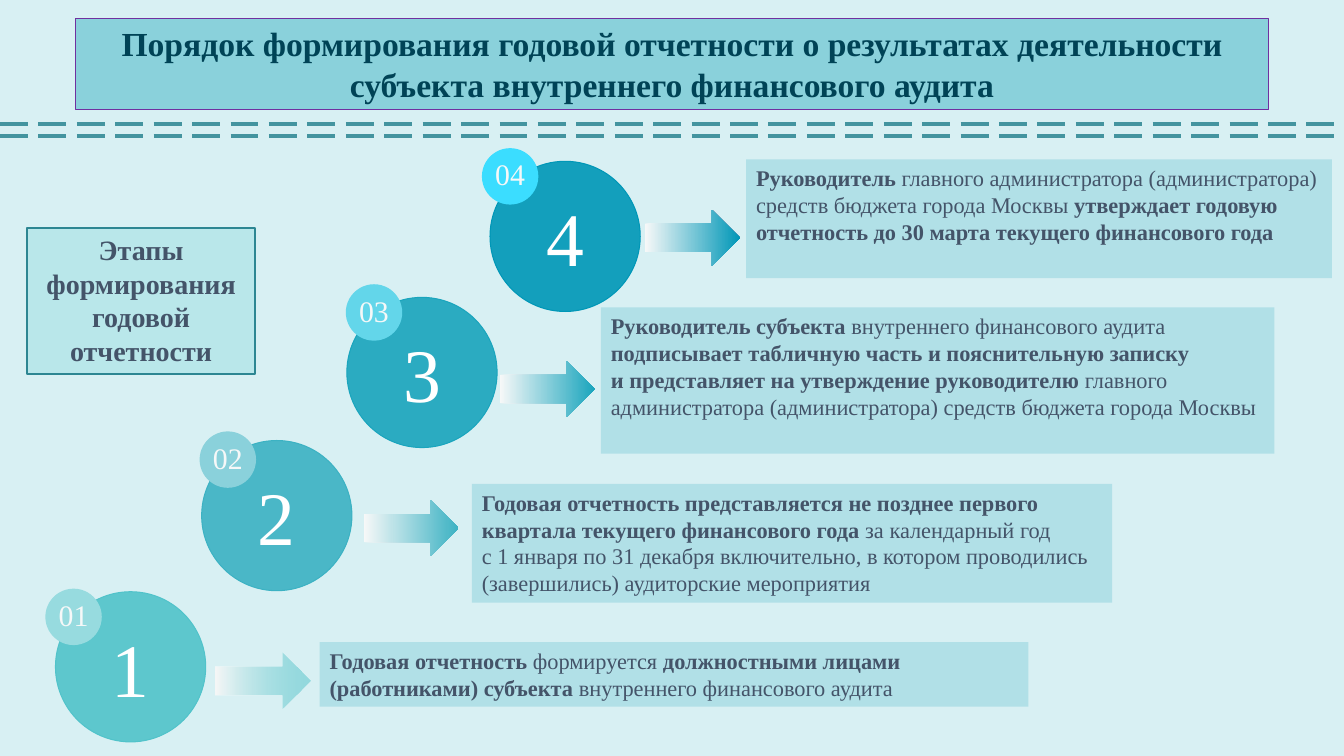
from lxml import etree
from pptx import Presentation
from pptx.dml.color import RGBColor
from pptx.enum import dml, shapes, text
from pptx.oxml.ns import qn
from pptx.util import Inches, Pt

FONT = "Times New Roman"
COLORS = {
    "background": "D8F0F3", "title_fill": "8AD1DB", "title_line": "7030A0",
    "title_text": "004356", "stages_fill": "B9E7EA", "stages_line": "2D8692",
    "note": "B1E0E7", "body": "445469", "divider": "43949F",
    "pale": "F6F8F8", "white": "FFFFFF",
}
CIRCLE, BADGE, ARROW = 1.49, 0.56, (0.94, 0.56)

TITLE = ("Порядок формирования годовой отчетности о результатах деятельности "
         "субъекта внутреннего финансового аудита")
STAGES = "Этапы формирования годовой отчетности"

# Each paragraph is a list of (words, bold)
STEPS = [
    dict(number=4, color="0097B7", badge_color="3BDDFF", circle=(4.86, 1.6),
         badge=(4.78, 1.47), arrow=(6.4, 2.08), note=(7.4, 1.58, 5.81, 1.18),
         words=[[("Руководитель ", True),
                 ("главного администратора (администратора) средств бюджета города Москвы ", False),
                 ("утверждает годовую отчетность до 30 марта текущего финансового года", True)]]),
    dict(number=3, color="1AA5BD", badge_color="63D6EA", circle=(3.44, 2.95),
         badge=(3.43, 2.82), arrow=(4.96, 3.58), note=(5.96, 3.05, 6.68, 1.45),
         words=[[("Руководитель субъекта ", True),
                 ("внутреннего финансового аудита ", False),
                 ("подписывает табличную часть и пояснительную записку", True)],
                [("и представляет на утверждение руководителю ", True),
                 ("главного администратора (администратора) средств бюджета города Москвы", False)]]),
    dict(number=2, color="3CB2C3", badge_color="8AD1DB", circle=(2, 4.37),
         badge=(1.98, 4.28), arrow=(3.61, 4.96), note=(4.68, 4.8, 6.35, 1.18),
         words=[[("Годовая отчетность представляется не позднее первого квартала "
                  "текущего финансового года ", True),
                 ("за календарный год", False)],
                [("с 1 января по 31 декабря включительно, в котором проводились "
                  "(завершились) аудиторские мероприятия", False)]]),
    dict(number=1, color="51C3CA", badge_color="97DBDF", circle=(0.55, 5.87),
         badge=(0.45, 5.84), arrow=(2.14, 6.47), arrow_opacity=51,
         note=(3.17, 6.37, 7.03, 0.64),
         words=[[("Годовая отчетность ", True), ("формируется", False),
                 (" должностными лицами (работниками) субъекта ", True),
                 ("внутреннего финансового аудита", False)]]),
]


def rgb(color):
    return RGBColor.from_string(color)


def set_opacity(color_parent, percent):
    color = color_parent.find(".//" + qn("a:srgbClr"))
    etree.SubElement(color, qn("a:alpha"), val=str(percent * 1000))


def add_figure(slide, preset, box, fill=None, line=None, width=0.75):
    figure = slide.shapes.add_shape(preset, *map(Inches, box))
    figure.shadow.inherit = False
    if fill:
        figure.fill.solid()
        figure.fill.fore_color.rgb = rgb(fill)
    if line:
        figure.line.color.rgb = rgb(line)
        figure.line.width = Pt(width)
    else:
        figure.line.fill.background()
    return figure


def write(figure, paragraphs, size, color, align=text.PP_ALIGN.CENTER,
          anchor=text.MSO_ANCHOR.TOP):
    frame = figure.text_frame
    frame.word_wrap = True
    frame.vertical_anchor = anchor
    for index, runs in enumerate(paragraphs):
        paragraph = frame.paragraphs[0] if index == 0 else frame.add_paragraph()
        paragraph.alignment = align
        for words, bold in runs:
            run = paragraph.add_run()
            run.text = words
            run.font.name = FONT
            run.font.size = Pt(size)
            run.font.bold = bold
            run.font.color.rgb = rgb(color)


def add_circle(slide, step):
    circle = add_figure(slide, shapes.MSO_SHAPE.OVAL, (*step["circle"], CIRCLE, CIRCLE),
                        step["color"], step["color"])
    set_opacity(circle.fill._xPr.find(qn("a:solidFill")), 91)
    write(circle, [[(str(step["number"]), False)]], 54, COLORS["white"],
          anchor=text.MSO_ANCHOR.MIDDLE)


def add_badge(slide, step):
    badge = add_figure(slide, shapes.MSO_SHAPE.OVAL, (*step["badge"], BADGE, BADGE),
                       step["badge_color"])
    write(badge, [[(f"{step['number']:02}", False)]], 21.3, COLORS["pale"],
          anchor=text.MSO_ANCHOR.MIDDLE)
    frame = badge.text_frame
    frame.word_wrap = False
    frame.margin_left = frame.margin_right = frame.margin_top = frame.margin_bottom = 0
    frame.paragraphs[0].line_spacing = 0.89


def add_arrow(slide, step):
    arrow = add_figure(slide, shapes.MSO_SHAPE.RIGHT_ARROW, (*step["arrow"], *ARROW))
    arrow.fill.gradient()
    arrow.fill.gradient_angle = 0
    tail, tip = arrow.fill.gradient_stops
    tail.position, tip.position = 0, 1
    tail.color.rgb = rgb(COLORS["pale"])
    tip.color.rgb = rgb(step["color"])
    if "arrow_opacity" in step:
        tip_xml = arrow.fill._xPr.findall(".//" + qn("a:gs"))[-1]
        set_opacity(tip_xml, step["arrow_opacity"])


def add_note(slide, step):
    note = add_figure(slide, shapes.MSO_SHAPE.RECTANGLE, step["note"], COLORS["note"])
    write(note, step["words"], 16, COLORS["body"], text.PP_ALIGN.LEFT)


def add_divider(slide, top):
    divider = slide.shapes.add_connector(shapes.MSO_CONNECTOR.STRAIGHT, 0, Inches(top),
                                         Inches(13.33), Inches(top))
    divider.line.color.rgb = rgb(COLORS["divider"])
    divider.line.width = Pt(2.5)
    divider.line.dash_style = dml.MSO_LINE.LONG_DASH
    etree.SubElement(divider._element.spPr, qn("a:effectLst"))


def main():
    deck = Presentation()
    deck.slide_width, deck.slide_height = Inches(13.33), Inches(7.5)
    slide = deck.slides.add_slide(deck.slide_layouts[6])
    slide.background.fill.solid()
    slide.background.fill.fore_color.rgb = rgb(COLORS["background"])

    # Staircase of steps, from the top down
    for step in STEPS:
        add_arrow(slide, step)
        add_circle(slide, step)
        add_badge(slide, step)
        add_note(slide, step)

    # Side caption
    stages = add_figure(slide, shapes.MSO_SHAPE.RECTANGLE, (0.27, 2.26, 2.26, 1.45),
                        COLORS["stages_fill"], COLORS["stages_line"], 1.5)
    write(stages, [[(STAGES, True)]], 20, COLORS["body"])

    # Title and dashed dividers
    title = add_figure(slide, shapes.MSO_SHAPE.RECTANGLE, (0.75, 0.18, 11.83, 0.91),
                       COLORS["title_fill"], COLORS["title_line"])
    write(title, [[(TITLE, True)]], 24, COLORS["title_text"])
    for top in (1.23, 1.35):
        add_divider(slide, top)

    deck.save("out.pptx")


if __name__ == "__main__":
    main()
